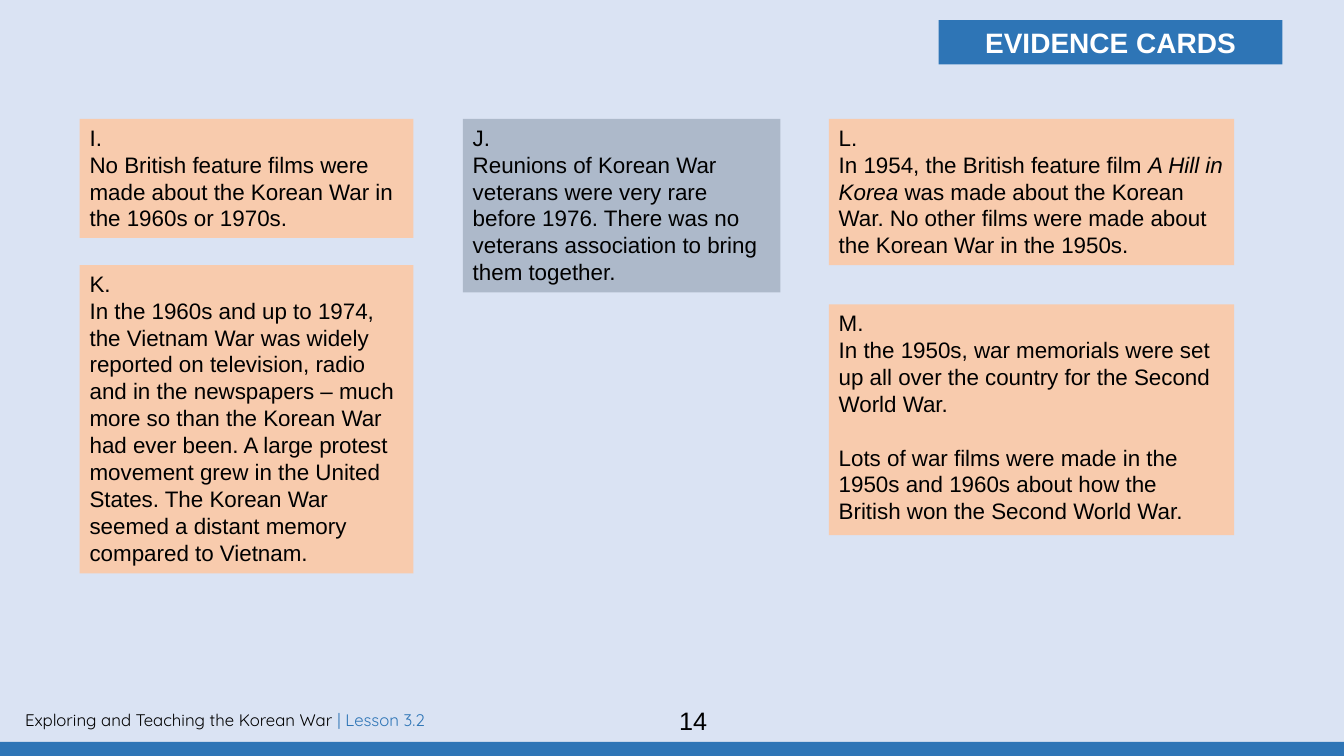
import pptx
import pptx.dml.color
import pptx.enum.shapes
import pptx.enum.text
import pptx.util

Inches = pptx.util.Inches
Pt = pptx.util.Pt
ALIGN = pptx.enum.text.PP_ALIGN
AUTO_SIZE = pptx.enum.text.MSO_AUTO_SIZE

BLUE = "2E75B6"
PEACH = "F8CBAD"
GREY = "ADB9CA"
CARD_SIZE = 16
CARD_TOP = 1.18
LEFT_COLUMN = (0.79, 3.31)
MIDDLE_COLUMN = (4.59, 3.15)
RIGHT_COLUMN = (8.22, 4.02)


def rgb(color):
    return pptx.dml.color.RGBColor.from_string(color)


def add_run(p, text, size, color="000000", font="Arial", bold=False, italic=False):
    r = p.add_run()
    r.text = text
    r.font.size = Pt(size)
    r.font.name = font
    r.font.bold = bold
    r.font.italic = italic
    r.font.color.rgb = rgb(color)


def add_box(s, left, top, width, height, fill):
    sp = s.shapes.add_shape(
        pptx.enum.shapes.MSO_SHAPE.RECTANGLE,
        Inches(left), Inches(top), Inches(width), Inches(height))
    sp.shadow.inherit = False
    sp.fill.solid()
    sp.fill.fore_color.rgb = rgb(fill)
    sp.line.fill.background()
    tf = sp.text_frame
    tf.word_wrap = True
    tf.vertical_anchor = pptx.enum.text.MSO_ANCHOR.TOP
    return tf


def add_text(s, left, top, width, height):
    tf = s.shapes.add_textbox(
        Inches(left), Inches(top), Inches(width), Inches(height)).text_frame
    tf.word_wrap = True
    return tf


def add_card(s, column, top, height, fill, letter, *paragraphs):
    left, width = column
    tf = add_box(s, left, top, width, height, fill)
    tf.auto_size = AUTO_SIZE.SHAPE_TO_FIT_TEXT
    p = tf.paragraphs[0]
    p.alignment = ALIGN.LEFT
    add_run(p, letter, CARD_SIZE)
    for runs in paragraphs:
        p = tf.add_paragraph()
        p.alignment = ALIGN.LEFT
        for text, italic in runs:
            add_run(p, text, CARD_SIZE, italic=italic)
    return tf


def plain(text):
    return [(text, False)]


def add_title(s):
    tf = add_box(s, 9.31, 0.2, 3.41, 0.44, BLUE)
    tf.auto_size = AUTO_SIZE.SHAPE_TO_FIT_TEXT
    p = tf.paragraphs[0]
    p.alignment = ALIGN.CENTER
    add_run(p, "EVIDENCE CARDS", 20, "FFFFFF", bold=True)


def add_footer(s):
    p = add_text(s, 0.15, 6.99, 7.82, 0.3).paragraphs[0]
    add_run(p, "Exploring and Teaching the Korean War ", 12, font="Quicksand")
    add_run(p, "| Lesson 3.2", 12, BLUE, font="Quicksand")
    add_box(s, 0, 7.36, 13.33, 0.14, BLUE)
    p = add_text(s, 4.34, 6.95, 5.07, 0.4).paragraphs[0]
    p.alignment = ALIGN.CENTER
    add_run(p, "14", 18)


def add_cards(s):
    add_card(s, LEFT_COLUMN, CARD_TOP, 1.18, PEACH, "I.",
             plain("No British feature films were made about the Korean War in "
                   "the 1960s or 1970s."))
    add_card(s, MIDDLE_COLUMN, CARD_TOP, 1.72, GREY, "J.",
             plain("Reunions of Korean War veterans were very rare"),
             plain("before 1976. There was no veterans association to bring "
                   "them together."))
    add_card(s, LEFT_COLUMN, 2.63, 3.06, PEACH, "K.",
             plain("In the 1960s and up to 1974, the Vietnam War was widely "
                   "reported on television, radio"),
             plain("and in the newspapers – much more so than the Korean War had "
                   "ever been. A large protest movement grew in the United States. "
                   "The Korean War seemed a distant memory compared to Vietnam."))
    add_card(s, RIGHT_COLUMN, CARD_TOP, 1.45, PEACH, "L.",
             [("In 1954, the British feature film ", False),
              ("A Hill in Korea", True),
              (" was made about the Korean War. No other films were made about "
               "the Korean War in the 1950s.", False)])
    tf = add_card(s, RIGHT_COLUMN, 3.02, 2.29, PEACH, "M.",
                  plain("In the 1950s, war memorials were set up all over the "
                        "country for the Second World War."),
                  plain("Lots of war films were made in the 1950s and 1960s about "
                        "how the British won the Second World War."))
    tf.paragraphs[-1].space_before = Pt(19.2)


def main():
    prs = pptx.Presentation()
    prs.slide_width = Inches(13.33)
    prs.slide_height = Inches(7.5)
    s = prs.slides.add_slide(prs.slide_layouts[6])
    s.background.fill.solid()
    s.background.fill.fore_color.rgb = rgb("DAE3F3")
    add_footer(s)
    add_cards(s)
    add_title(s)
    prs.save("out.pptx")


if __name__ == "__main__":
    main()
